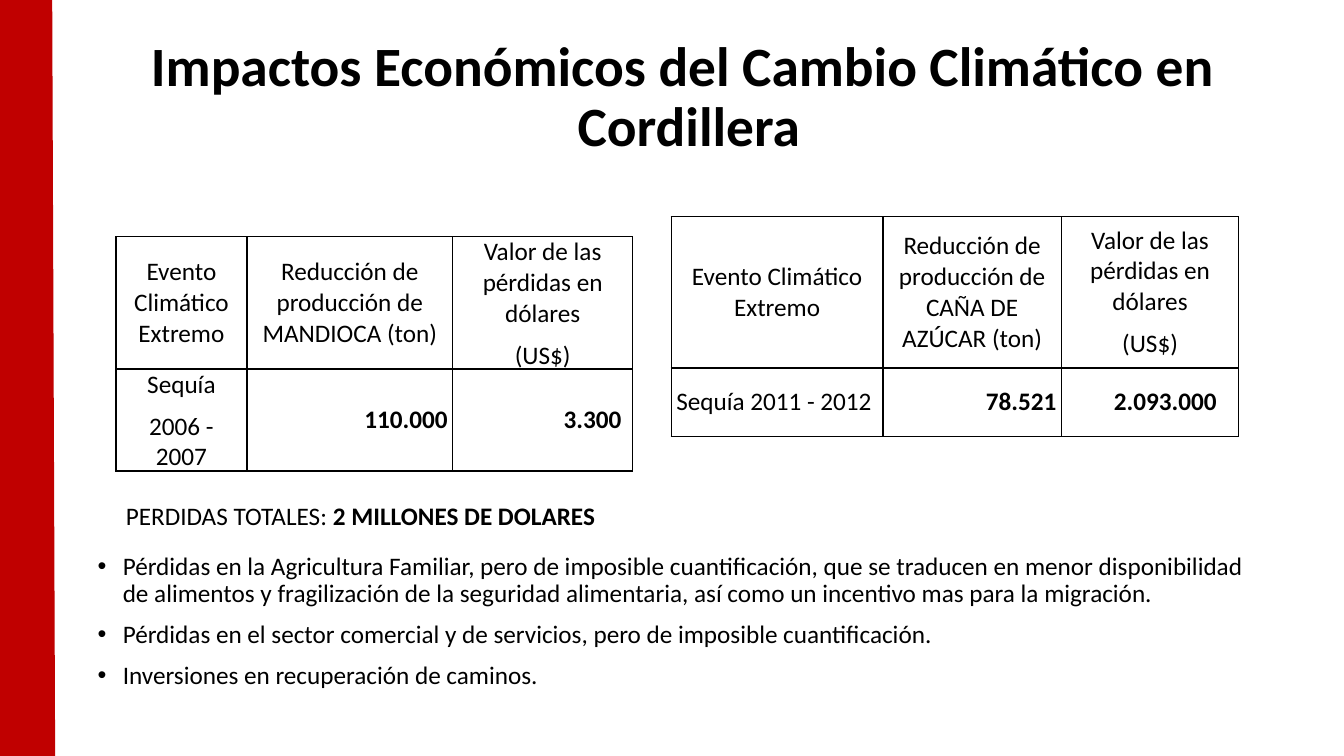
from lxml import etree
from pptx import Presentation
from pptx import util as u
from pptx.dml.color import RGBColor
from pptx.enum import shapes, text
from pptx.oxml import ns

COLORS = {"ink": "000000", "band": "C00000"}
ALIGN = {"l": text.PP_ALIGN.LEFT, "c": text.PP_ALIGN.CENTER, "r": text.PP_ALIGN.RIGHT}
LOSS_HEADING = "Valor de las pérdidas en dólares\n(US$)"


class SlideBuilder:
    """Holds the text style and the current slide, and adds elements in points."""

    def __init__(self, page, font="Calibri", size=18):
        self.page, self.font, self.size = page, font, size

    def style(self, para, size=None, bold=False, align="l"):
        para.alignment = ALIGN[align]
        for span in para.runs:
            span.font.name = self.font
            span.font.size = u.Pt(size or self.size)
            span.font.bold = bold
            span.font.color.rgb = RGBColor.from_string(COLORS["ink"])

    def text_box(self, frame, content, anchor=text.MSO_ANCHOR.TOP, spacing=1.0, **style):
        box = self.page.shapes.add_textbox(*map(u.Pt, frame))
        body = box.text_frame
        body.word_wrap = True
        body.vertical_anchor = anchor
        body.text = content
        for para in body.paragraphs:
            para.line_spacing = spacing
            self.style(para, **style)
        return body

    def bullets(self, frame, items, indent=18):
        body = self.text_box(frame, "\n".join(items), spacing=0.9)
        for para in body.paragraphs:
            para.space_before = u.Pt(10)
            props = para._p.get_or_add_pPr()
            props.set("marL", str(u.Pt(indent)))
            props.set("indent", str(-u.Pt(indent)))
            etree.SubElement(props, ns.qn("a:buFont")).set("typeface", "Arial")
            etree.SubElement(props, ns.qn("a:buChar")).set("char", "•")

    def border(self, cell, width=1):
        props = cell._tc.get_or_add_tcPr()
        for place, side in enumerate(("lnL", "lnR", "lnT", "lnB")):
            line = etree.Element(ns.qn(f"a:{side}"), w=str(u.Pt(width)))
            fill = etree.SubElement(line, ns.qn("a:solidFill"))
            etree.SubElement(fill, ns.qn("a:srgbClr")).set("val", COLORS["ink"])
            props.insert(place, line)

    def table(self, left, top, widths, heights, rows, event_align, last_inset):
        frame = self.page.shapes.add_table(
            len(rows), len(widths), *map(u.Pt, (left, top, sum(widths), sum(heights))))
        grid = frame.table
        grid.first_row = grid.horz_banding = False
        for column, width in zip(grid.columns, widths):
            column.width = u.Pt(width)
        for row, height in zip(grid.rows, heights):
            row.height = u.Pt(height)
        for r, values in enumerate(rows):
            for c, value in enumerate(values):
                cell = grid.cell(r, c)
                figure = r > 0 and c > 0
                cell.text_frame.text = value
                cell.vertical_anchor = text.MSO_ANCHOR.MIDDLE
                cell.margin_left = cell.margin_right = u.Pt(3.6)
                cell.margin_top = cell.margin_bottom = 0
                if figure and c == len(widths) - 1:
                    cell.margin_right = u.Pt(last_inset)
                cell.fill.background()
                self.border(cell)
                align = "r" if figure else event_align if r else "c"
                for para in cell.text_frame.paragraphs:
                    para.space_after = u.Pt(8)
                    self.style(para, bold=figure, align=align)

    def line(self, start, end, color, width):
        line = self.page.shapes.add_connector(
            shapes.MSO_CONNECTOR.STRAIGHT, *map(u.Pt, start + end))
        line.line.color.rgb = RGBColor.from_string(COLORS[color])
        line.line.width = u.Pt(width)
        etree.SubElement(line._element.spPr, ns.qn("a:effectLst"))


def main():
    deck = Presentation()
    deck.slide_width, deck.slide_height = u.Pt(960), u.Pt(540)
    slide = SlideBuilder(deck.slides.add_slide(deck.slide_layouts[6]))

    slide.bullets((62.64, 391.68, 833, 128), [
        "Pérdidas en la Agricultura Familiar, pero de imposible cuantificación, que se "
        "traducen en menor disponibilidad de alimentos y fragilización de la seguridad "
        "alimentaria, así como un incentivo mas para la migración.",
        "Pérdidas en el sector comercial y de servicios, pero de imposible cuantificación.",
        "Inversiones en recuperación de caminos.",
    ])
    totals = slide.text_box((82.8, 353.5, 792.7, 29), "PERDIDAS TOTALES: ")
    amount = totals.paragraphs[0].add_run()
    amount.text = "2 MILLONES DE DOLARES"
    slide.style(totals.paragraphs[0])
    amount.font.bold = True

    slide.table(82.8, 169.2, (93.6, 147, 128.5), (94.3, 51.1), [
        ("Evento Climático Extremo", "Reducción de producción de MANDIOCA (ton)", LOSS_HEADING),
        ("Sequía\n2006 - 2007", "110.000", "3.300"),
    ], event_align="c", last_inset=8)
    slide.table(479.5, 154.8, (151.2, 127.5, 126.7), (108, 49), [
        ("Evento Climático Extremo", "Reducción de producción de CAÑA DE AZÚCAR (ton)",
         LOSS_HEADING),
        ("Sequía 2011 - 2012", "78.521", "2.093.000"),
    ], event_align="l", last_inset=15.8)

    slide.line((17.3, 0), (19.4, 540), "band", 40)
    slide.text_box((87.8, 13.7, 808.6, 113.8),
                   "Impactos Económicos del Cambio Climático en \vCordillera",
                   anchor=text.MSO_ANCHOR.MIDDLE, spacing=0.9, size=39.6, bold=True, align="c")
    deck.save("out.pptx")


if __name__ == "__main__":
    main()
